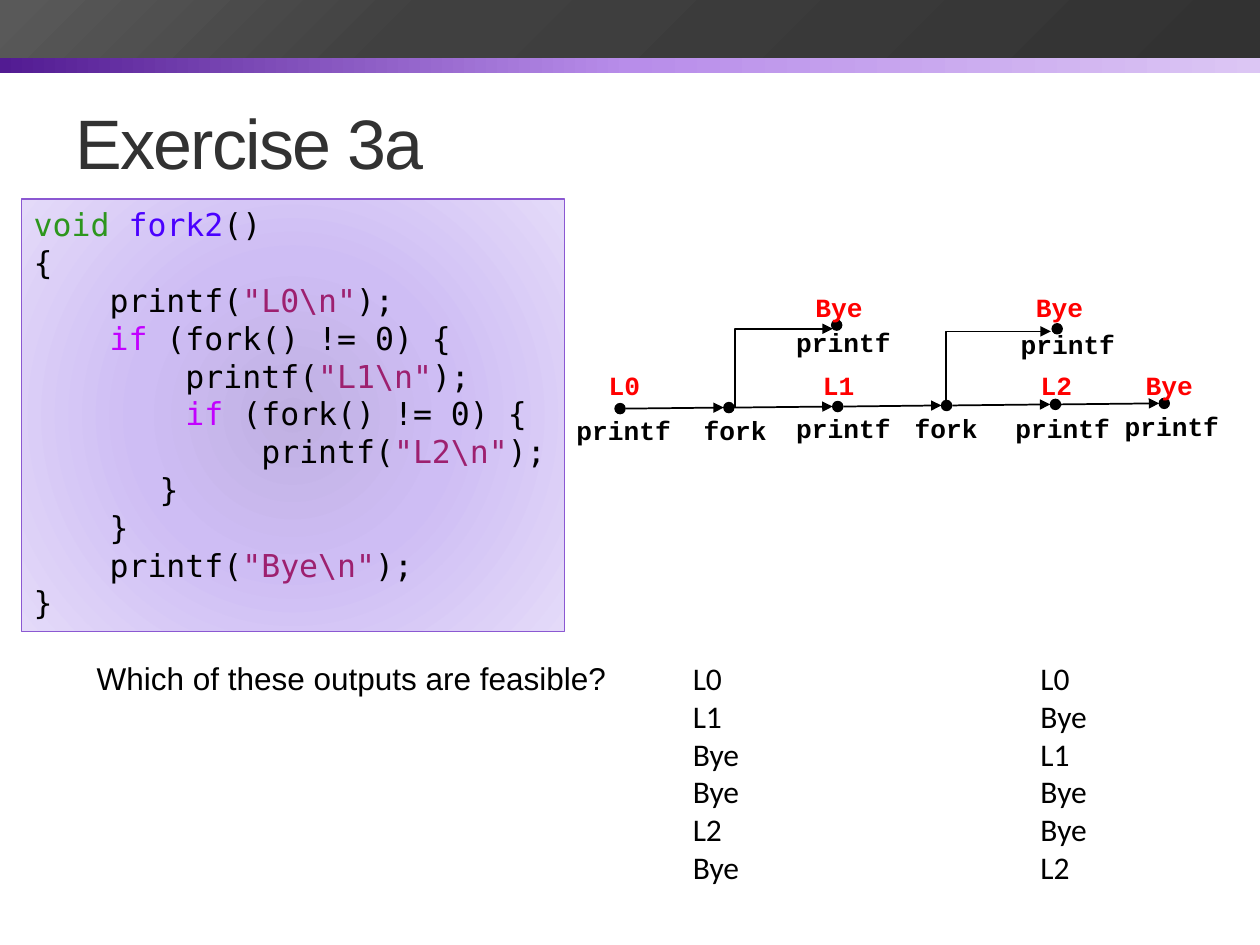
from lxml.etree import SubElement as Sub
from pptx import Presentation
from pptx.dml.color import RGBColor as Rgb
from pptx.enum.shapes import MSO_CONNECTOR as Link, MSO_SHAPE as Form
from pptx.enum.text import MSO_ANCHOR as Anchor, MSO_AUTO_SIZE as Auto, PP_ALIGN as Align
from pptx.oxml import parse_xml as to_xml
from pptx.oxml.ns import nsdecls, qn
from pptx.util import Pt

HUES = {
    "black": "000000", "red": "FF0000", "title": "323232", "edge": "8B58D2",
    "type": "2D961E", "name": "4A00FF", "key": "C200FF", "quote": "9D206F",
}
MONO, SANS = "DejaVu Sans Mono", "Arial"

BAR = [(0, "521B92"), (50, "B88DEA"), (100, "DCC6F4")]
BAND = [(0, "323232"), (66, "404040"), (99, "595959")]
GLOW = [(0, "C0B0E2"), (45, "CEBDF4"), (100, "E4DAF9")]
LINEAR = '<a:lin ang="{}" scaled="0"/>'
ROUND = ('<a:path path="circle"><a:fillToRect l="100000" t="100000" '
         'r="100000" b="100000"/></a:path>')

START, STEP, BASE, DRIFT = 354.3, 62.2, 233.5, 0.6
DOT = 5.8
# word, word centre, word top, word width, printed output
STAGES = [
    ("printf", 356.4, 233.3, 69, "L0"),
    ("fork", 420.1, 233.3, 51, None),
    ("printf", 482, 231.8, 73, "L1"),
    ("fork", 540.7, 231.8, 63, None),
    ("printf", 607.3, 231.8, 80, "L2"),
    ("printf", 669.6, 231.1, 71, "Bye"),
]
PRINT_MID = {0: 356.8, 2: 479.2, 4: 603.7, 5: 668.2}
# line start, line end, dot centre, word centre, word top, word width, output centre
FORKS = [
    ((419.8, 233.3), (475.9, 187.9), (478.1, 185.8), 482, 182.9, 78.5, 479.5),
    ((540.7, 231.8), (600.5, 189.4), (604.1, 187.9), 610.2, 184.3, 75.6, 605.5),
]


def say(word):
    """Return the runs of a printf line."""
    return [("printf(", "black"), (f'"{word}\\n"', "quote"), (");", "black")]


TEST = [("if", "key"), (" (fork() != 0) {", "black")]
END = [("}", "black")]
TAB = 43.35
CODE = [
    (0, [("void ", "type"), ("fork2", "name"), ("()", "black")]),
    (0, [("{", "black")]),
    (TAB, say("L0")),
    (TAB, TEST),
    (2 * TAB, say("L1")),
    (2 * TAB, TEST),
    (3 * TAB, say("L2")),
    (72, END),
    (TAB, END),
    (TAB, say("Bye")),
    (0, END),
]


def hue(key):
    """Return a named colour."""
    return Rgb.from_string(HUES[key])


def style(run, font, size, key, bold=False):
    """Set the font of a run."""
    run.font.name, run.font.size, run.font.bold = font, Pt(size), bold
    run.font.color.rgb = hue(key)


def add_block(slide, box, stops, way):
    """Add a rectangle with a gradient fill."""
    shape = slide.shapes.add_shape(Form.RECTANGLE, *map(Pt, box))
    shape.shadow.inherit = False
    shape.line.fill.background()
    marks = "".join(f'<a:gs pos="{at * 1000}"><a:srgbClr val="{tone}"/></a:gs>'
                    for at, tone in stops)
    fill = to_xml(f'<a:gradFill {nsdecls("a")} rotWithShape="1">'
                  f'<a:gsLst>{marks}</a:gsLst>{way}</a:gradFill>')
    shape._element.spPr.find(qn("a:prstGeom")).addnext(fill)
    return shape


def add_text(slide, box, lines, font, size, key="black", bold=False,
             align=Align.LEFT, wrap=False):
    """Add a text box with one style throughout."""
    shape = slide.shapes.add_textbox(*map(Pt, box))
    frame = shape.text_frame
    frame.text = lines
    frame.word_wrap = wrap
    for para in frame.paragraphs:
        para.alignment = align
        for run in para.runs:
            style(run, font, size, key, bold)
    return shape


def add_label(slide, mid, top, width, word, key="black"):
    """Add a centred label of the process graph."""
    add_text(slide, (mid - width / 2, top, width, 25.2), word, "Courier New",
             15, key, True, Align.CENTER, key == "black")


def add_print(slide, mid, top, word):
    """Add a red label with printed output."""
    add_label(slide, mid, top, 18 * len(word) / 2 + 14.4, word, "red")


def add_dot(slide, x, y):
    """Add a black dot centred on a point."""
    dot = slide.shapes.add_shape(Form.OVAL, Pt(x - DOT / 2), Pt(y - DOT / 2),
                                 Pt(DOT), Pt(DOT))
    dot.shadow.inherit = False
    dot.fill.solid()
    dot.fill.fore_color.rgb = dot.line.color.rgb = hue("black")
    dot.line.width = Pt(0.75)


def add_arrow(slide, kind, start, end):
    """Add a black connector with an arrowhead at its end."""
    arrow = slide.shapes.add_connector(kind, *map(Pt, start + end))
    arrow.line.color.rgb = hue("black")
    arrow.line.width = Pt(1)
    Sub(arrow.line._get_or_add_ln(), qn("a:tailEnd"), type="triangle")
    Sub(arrow._element.spPr, qn("a:effectLst"))
    return arrow


def add_bend(slide, start, end):
    """Add an arrow that goes up and then right."""
    (left, low), (right, high) = start, end
    x, y = (left + right) / 2, (low + high) / 2
    rise, run = (low - high) / 2, (right - left) / 2
    arrow = add_arrow(slide, Link.ELBOW, (x + rise, y + run), (x - rise, y - run))
    props = arrow._element.spPr
    props.find(qn("a:prstGeom")).set("prst", "bentConnector2")
    props.find(qn("a:xfrm")).set("rot", str(90 * 60000))


def add_code(slide):
    """Add the code panel."""
    panel = add_block(slide, (12.2, 113.8, 310.3, 247), GLOW, ROUND)
    panel.line.color.rgb = hue("edge")
    panel.line.width = Pt(0.75)
    frame = panel.text_frame
    frame.word_wrap, frame.auto_size = True, Auto.NONE
    frame.vertical_anchor = Anchor.TOP
    for row, (indent, parts) in enumerate(CODE):
        para = frame.add_paragraph() if row else frame.paragraphs[0]
        para.alignment = Align.LEFT
        para._p.get_or_add_pPr().set("marL", str(int(Pt(indent))))
        for word, key in parts:
            run = para.add_run()
            run.text = word
            style(run, MONO, 18, key)


def add_graph(slide):
    """Add the process graph."""
    spots = [(START + STEP * i, BASE - DRIFT * i) for i in range(len(STAGES))]
    for (x, y), (far, high) in zip(spots, spots[1:]):
        add_arrow(slide, Link.STRAIGHT, (x + 3.3, y), (far - 2.9, high))
    for i, (word, mid, top, width, out) in enumerate(STAGES):
        add_dot(slide, *spots[i])
        add_label(slide, mid, top, width, word)
        if out:
            add_print(slide, PRINT_MID[i], 207.4, out)
    for start, end, dot, mid, top, width, out_mid in FORKS:
        add_bend(slide, start, end)
        add_dot(slide, *dot)
        add_label(slide, mid, top, width, "printf")
        add_print(slide, out_mid, 162.7, "Bye")


def main():
    """Build the slide and save it."""
    deck = Presentation()
    deck.slide_width, deck.slide_height = Pt(720), Pt(540)
    slide = deck.slides.add_slide(deck.slide_layouts[6])
    add_block(slide, (0, 17.3, 720, 24.5), BAR, LINEAR.format(0))
    add_block(slide, (0, 0, 720, 33.1), BAND, LINEAR.format(225 * 60000))
    title = add_text(slide, (36, 41.8, 648, 77.8), "Exercise 3a", SANS, 40,
                     "title", wrap=True)
    title.text_frame.vertical_anchor = Anchor.MIDDLE
    title.text_frame.paragraphs[0].runs[0].font._element.set("spc", "-100")
    add_code(slide)
    add_graph(slide)
    for left, words in ((388.8, "L0 L1 Bye Bye L2 Bye"),
                        (587.5, "L0 Bye L1 Bye Bye L2")):
        add_text(slide, (left, 373, 41, 138.2), "\n".join(words.split()),
                 "Calibri", 18)
    add_text(slide, (48.2, 373, 308.2, 28.8),
             "Which of these outputs are feasible?", SANS, 18)
    deck.save("out.pptx")


main()
